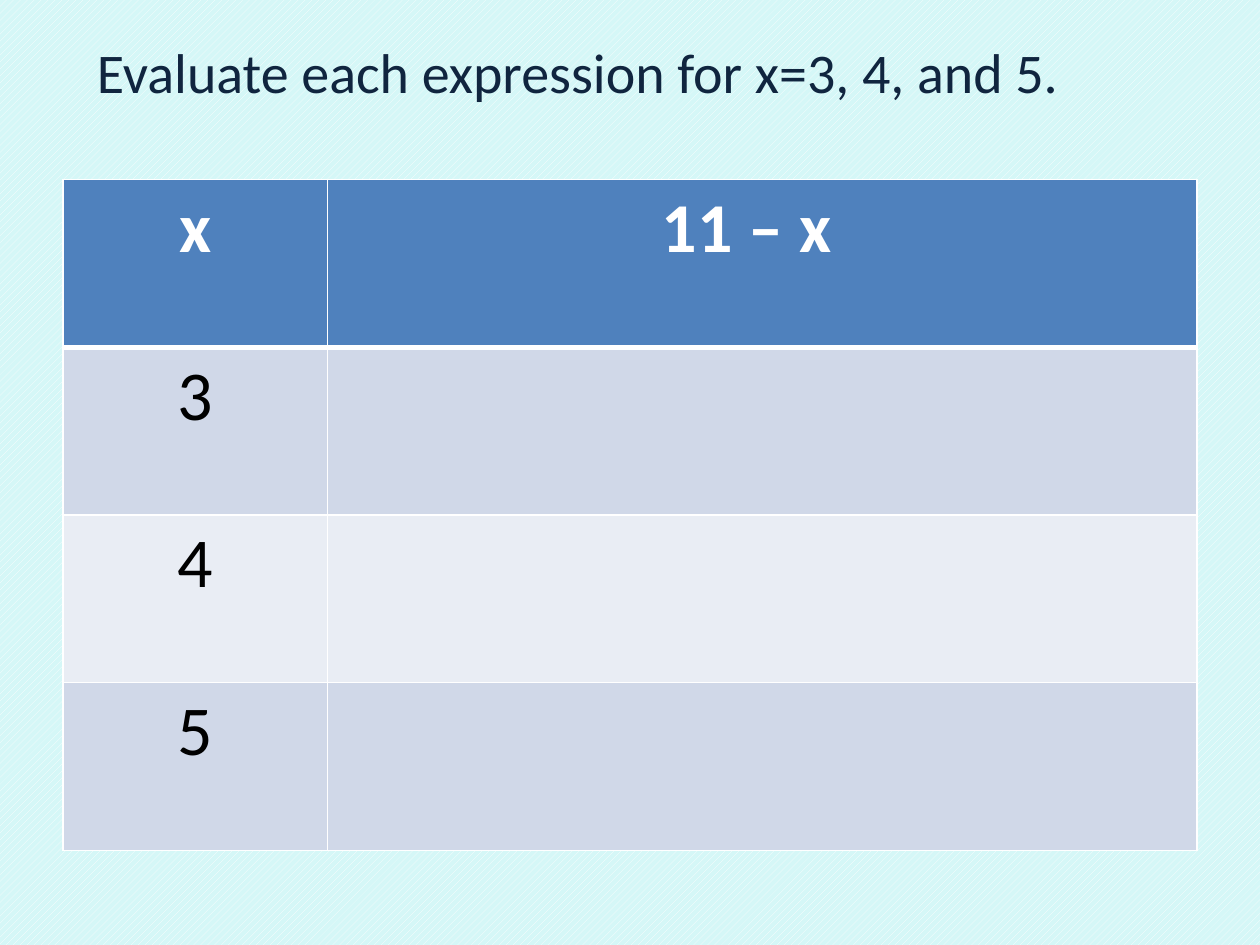
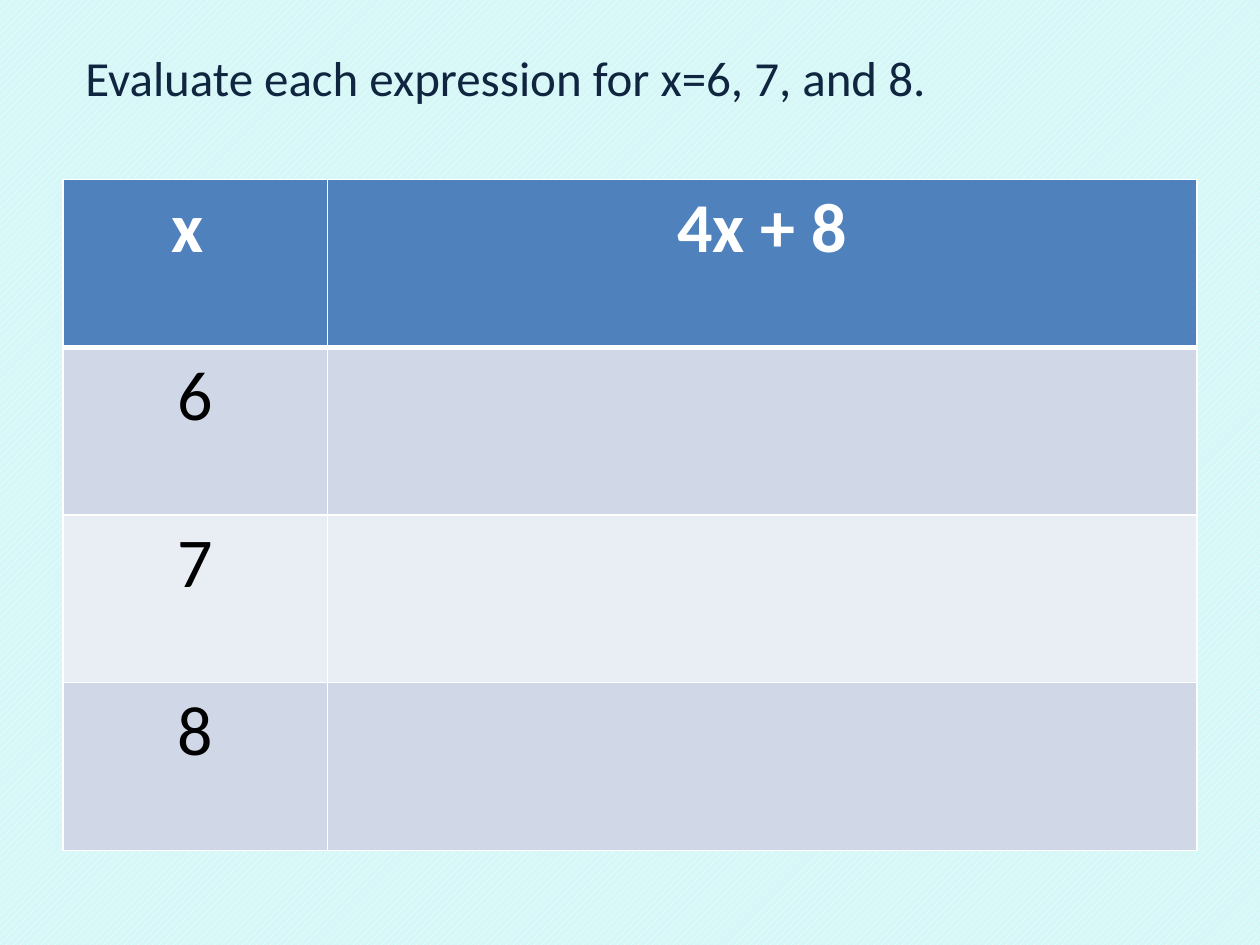
import pptx
import pptx.util
import pptx.dml.color
import pptx.enum.dml
import pptx.enum.text
import pptx.oxml
import pptx.oxml.ns
import lxml.etree


def rgb(value):
    return pptx.dml.color.RGBColor.from_string(value)


def write(p, text, color, **fmt):
    r = p.add_run()
    r.text = text
    r.font.color.rgb = rgb(color)
    for name, value in {"name": "Calibri", **fmt}.items():
        setattr(r.font, name, value)


INK, WHITE, BLACK, HEADER = "10253F", "FFFFFF", "000000", "4F81BD"
BANDS = ["E9EDF4", "D0D8E8"]
PATTERN_BACK = "D5F7F7"
ROWS, COLS = 4, 2

prs = pptx.Presentation()
prs.slide_width = pptx.util.Inches(10)
prs.slide_height = pptx.util.Inches(7.5)
W, H = prs.slide_width, prs.slide_height
table_width, table_height = int(W * 0.9), int(H * 0.71)
x_width = int(W * 0.21)

slides = [
    {"title": "Evaluate each expression for x=3, 4, and 5.", "size": 32,
     "box": (0.67, 0.25, 8.75, 0.63), "expression": "11 – x",
     "values": [3, 4, 5], "header_pads": [0, 0.25]},
    {"title": "Evaluate each expression for x=6, 7, and 8.", "size": 28,
     "box": (0.58, 0.33, 8.83, 0.57), "expression": "4x + 8",
     "values": [6, 7, 8], "header_pads": [0.13, 0]},
]

for content in slides:
    s = prs.slides.add_slide(prs.slide_layouts[6])
    fill = s.background.fill
    fill.patterned()
    fill.pattern = pptx.enum.dml.MSO_PATTERN.WIDE_UPWARD_DIAGONAL
    fill.fore_color.rgb = rgb(WHITE)
    fill.back_color.rgb = rgb(PATTERN_BACK)

    table = s.shapes.add_table(ROWS, COLS, (W - table_width) // 2, int(H * 0.19),
                               table_width, table_height).table
    table.columns[0].width = x_width
    table.columns[1].width = table_width - x_width
    texts = [["x", content["expression"]]] + [[str(v), ""] for v in content["values"]]

    for row, line in enumerate(texts):
        table.rows[row].height = table_height // ROWS
        for col, text in enumerate(line):
            cell = table.cell(row, col)
            tcPr = cell._tc.get_or_add_tcPr()
            widths = {"L": 1, "R": 1, "T": 3 if row == 1 else 1, "B": 3 if row == 0 else 1}
            for side, width in widths.items():
                tcPr.append(pptx.oxml.parse_xml(
                    f'<a:ln{side} {pptx.oxml.ns.nsdecls("a")} w="{pptx.util.Pt(width)}">'
                    f'<a:solidFill><a:srgbClr val="{WHITE}"/></a:solidFill></a:ln{side}>'))
            cell.fill.solid()
            cell.fill.fore_color.rgb = rgb(BANDS[row % 2] if row else HEADER)
            if row == 0:
                cell.margin_right = pptx.util.Inches(0.1 + content["header_pads"][col])
            if text:
                p = cell.text_frame.paragraphs[0]
                p.alignment = pptx.enum.text.PP_ALIGN.CENTER
                write(p, text, BLACK if row else WHITE, size=pptx.util.Pt(40), bold=row == 0)

    sp = s.shapes.add_textbox(*map(pptx.util.Inches, content["box"]))
    tf = sp.text_frame
    tf.word_wrap = True
    tf.auto_size = pptx.enum.text.MSO_AUTO_SIZE.SHAPE_TO_FIT_TEXT
    write(tf.paragraphs[0], content["title"], INK, size=pptx.util.Pt(content["size"]))

prs.save("out.pptx")
